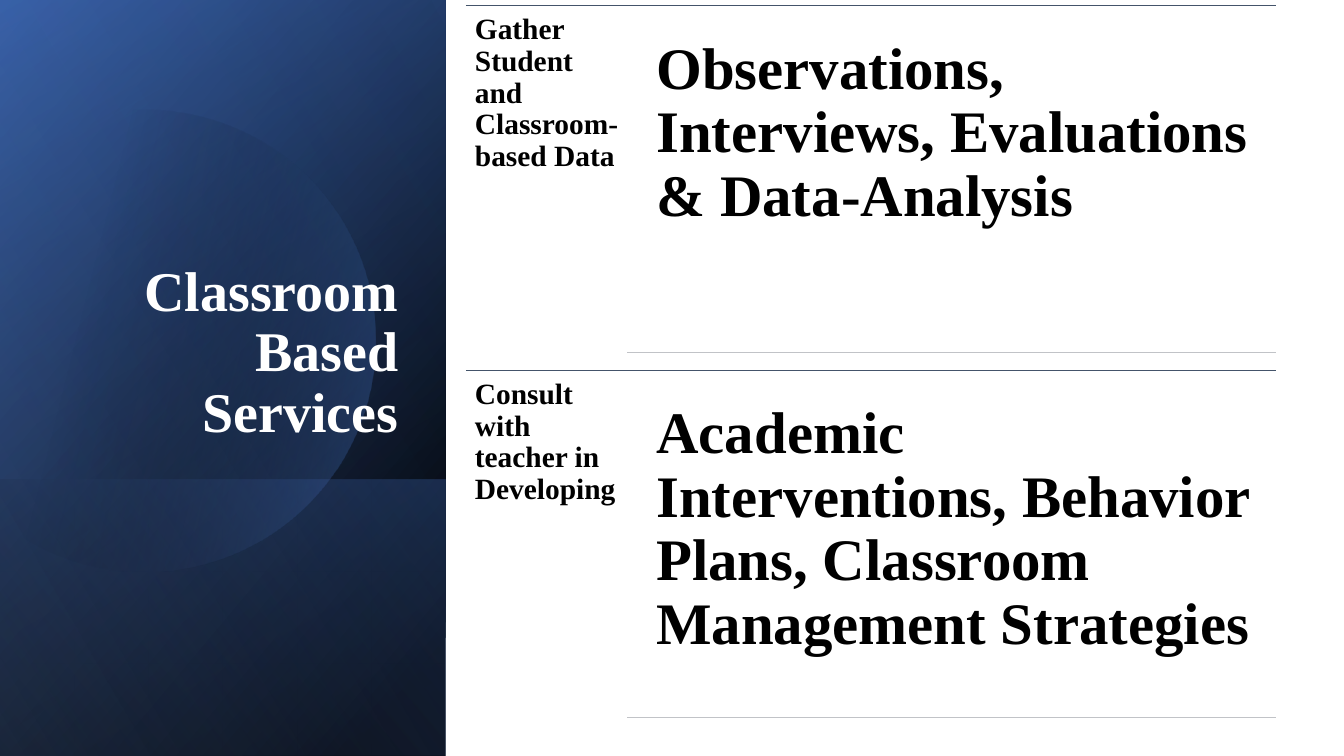
import math
import pptx
import pptx.util
import pptx.dml.color
import pptx.enum.shapes
import pptx.enum.text
import pptx.oxml
import pptx.oxml.ns

Inches, Pt = pptx.util.Inches, pptx.util.Pt
qn = pptx.oxml.ns.qn
FONT = "Times New Roman"
TITLE = "Classroom Based Services"
ROWS = [
    ("Gather Student and Classroom-based Data",
     "Observations, Interviews, Evaluations & Data-Analysis"),
    ("Consult with teacher in Developing",
     "Academic Interventions, Behavior Plans, Classroom Management Strategies"),
]

# Gradient: angle, then stops of (percent, colour, opacity)
BASE = (50, [(8, "000000", 100), (100, "2F5597", 100)])
GLOW = (30, [(0, "000000", 0), (99, "4472C4", 46)])
FOOT = (130, [(2, "4472C4", 29), (100, "000000", 30)])
DISC = (14, [(29, "000000", 0), (100, "4472C4", 43)])
SHEEN = (120, [(0, "000000", 0), (99, "8FAADC", 11)])

SIDE = 4.42                      # width of the left panel
HIGH = 7.5
LEFT, MID, RIGHT = 4.62, 6.22, 12.66
TOP, STEP = 0.05, 3.62


def color(code):
    return pptx.dml.color.RGBColor.from_string(code)


def shade(shape, grad):
    angle, stops = grad
    shape.shadow.inherit = False
    shape.line.fill.background()
    shape.fill.background()
    marks = "".join(
        f'<a:gs pos="{pos * 1000}"><a:srgbClr val="{code}">'
        f'<a:alpha val="{alpha * 1000}"/></a:srgbClr></a:gs>'
        for pos, code, alpha in stops)
    node = pptx.oxml.parse_xml(
        f'<a:gradFill {pptx.oxml.ns.nsdecls("a")} rotWithShape="1">'
        f'<a:gsLst>{marks}</a:gsLst>'
        f'<a:lin ang="{angle * 60000}" scaled="0"/></a:gradFill>')
    props = shape._element.spPr
    props.replace(props.find(qn("a:noFill")), node)


def panel(top, high, grad):
    # A mirrored quarter turn, placed by its visible box
    mid = top + high / 2
    shape = slide.shapes.add_shape(
        pptx.enum.shapes.MSO_SHAPE.RECTANGLE,
        Inches((SIDE - high) / 2), Inches(mid - SIDE / 2),
        Inches(high), Inches(SIDE))
    shape.rotation = 90
    shape._element.spPr.find(qn("a:xfrm")).set("flipH", "1")
    shade(shape, grad)


def disc(x, y, radius, edge):
    # Circle cut off by a vertical edge on the left
    end = math.pi - math.acos((x - edge) / radius)
    count = 90
    turns = [end * (2 * i / count - 1) for i in range(count + 1)]
    spots = [(Inches(x + radius * math.cos(t)), Inches(y + radius * math.sin(t)))
             for t in turns]
    form = slide.shapes.build_freeform(*spots[0])
    form.add_line_segments(spots[1:], close=True)
    shade(form.convert_to_shape(), DISC)


def write(frame, text, size, code, align):
    frame.word_wrap = True
    para = frame.paragraphs[0]
    para.alignment = align
    para.line_spacing = 0.9
    run = para.add_run()
    run.text = text
    run.font.name, run.font.size, run.font.bold = FONT, Pt(size), True
    run.font.color.rgb = color(code)


def label(x, y, wide, high, pad, text, size):
    box = slide.shapes.add_textbox(
        Inches(x), Inches(y), Inches(wide), Inches(high))
    frame = box.text_frame
    frame.margin_left = frame.margin_right = Inches(pad)
    frame.margin_top = frame.margin_bottom = Inches(pad)
    write(frame, text, size, "000000", pptx.enum.text.PP_ALIGN.LEFT)


def rule(x, y, code, width):
    line = slide.shapes.add_connector(
        pptx.enum.shapes.MSO_CONNECTOR.STRAIGHT,
        Inches(x), Inches(y), Inches(RIGHT), Inches(y))
    line.line.color.rgb = color(code)
    line.line.width = Pt(width)
    line._element.spPr.append(pptx.oxml.parse_xml(
        f'<a:effectLst {pptx.oxml.ns.nsdecls("a")}/>'))


deck = pptx.Presentation()
deck.slide_width, deck.slide_height = Inches(13.33), Inches(HIGH)
slide = deck.slides.add_slide(deck.slide_layouts[5])

# Left panel, layered from back to front
panel(0, HIGH, BASE)
panel(0, HIGH, GLOW)
panel(4.76, 2.74, FOOT)
disc(1.43, 3.38, 2.29, -0.15)
panel(0, HIGH, SHEEN)

# Title above the panel
title = slide.shapes.title
slide.shapes._spTree.append(title._element)
title.left, title.top = Inches(0.64), Inches(1.84)
title.width, title.height = Inches(3.41), Inches(2.62)
title.text_frame.vertical_anchor = pptx.enum.text.MSO_ANCHOR.BOTTOM
write(title.text_frame, TITLE, 40, "FFFFFF", pptx.enum.text.PP_ALIGN.RIGHT)

# Rows: a short label beside a large statement
for i, (name, body) in enumerate(ROWS):
    y = TOP + i * STEP
    rule(LEFT, y, "44546A", 0.5)
    label(LEFT, y, 1.61, STEP, 0.09, name, 21)
    label(MID + 0.12, y + 0.16, 6.31, 3.29, 0.17, body, 42)
    rule(MID, y + 3.45, "C1C3C7", 1)

deck.save("out.pptx")
